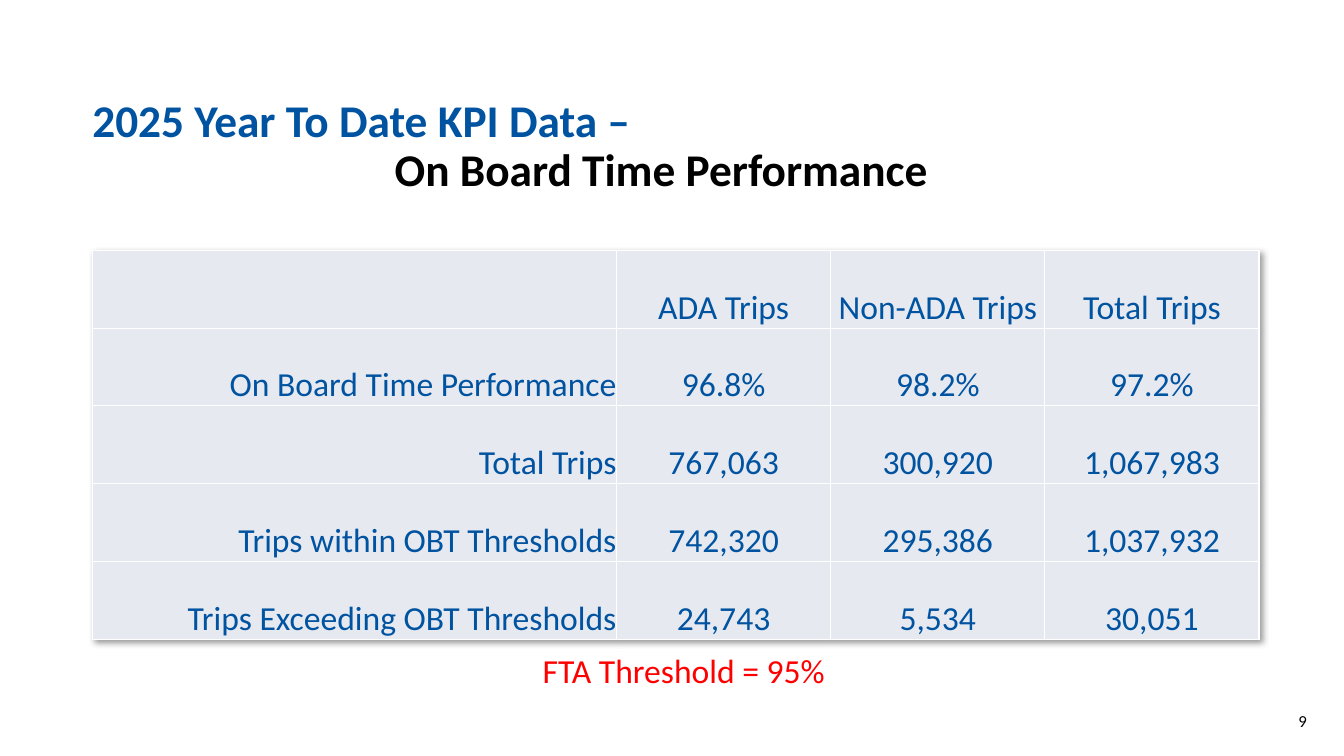
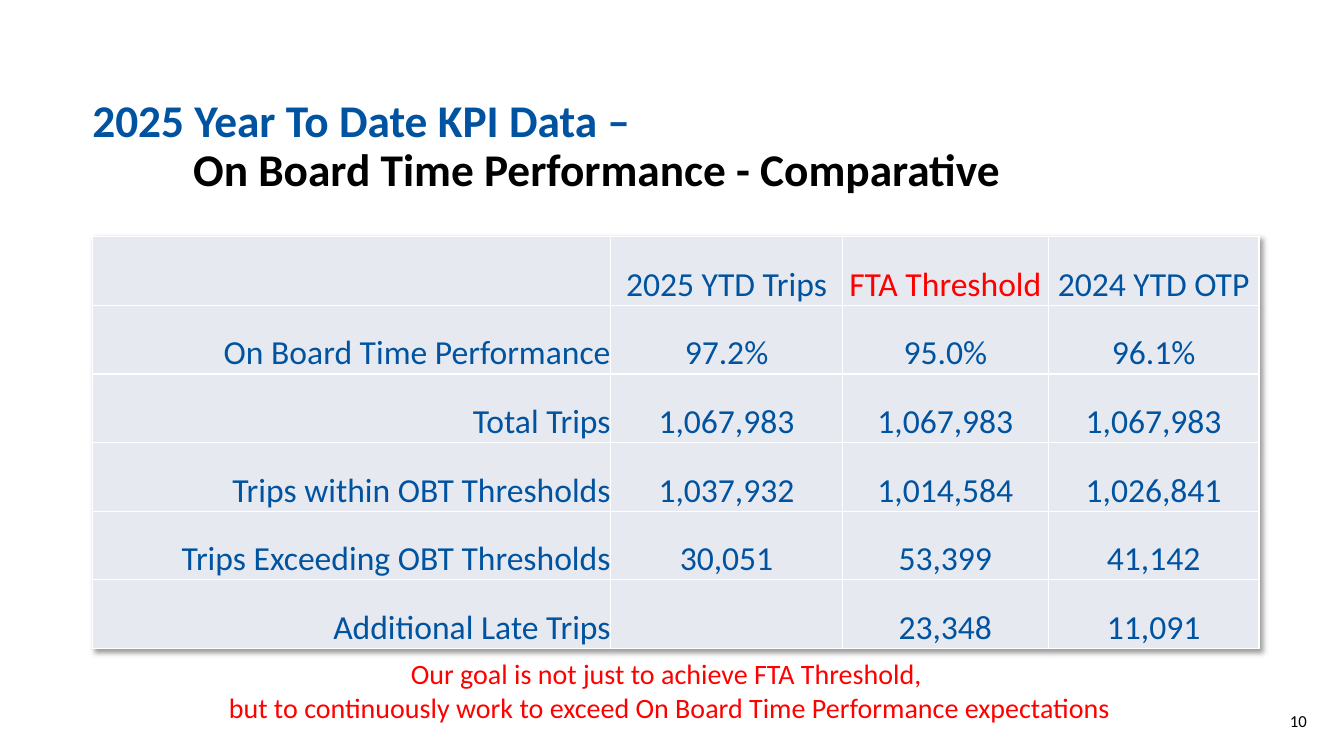
from dataclasses import dataclass

from lxml import etree
from pptx import Presentation
from pptx.dml.color import RGBColor
from pptx.enum.text import MSO_ANCHOR, PP_ALIGN
from pptx.oxml import parse_xml
from pptx.util import Inches, Pt

LEFT, CENTER, RIGHT = PP_ALIGN.LEFT, PP_ALIGN.CENTER, PP_ALIGN.RIGHT
TOP, MIDDLE, BOTTOM = MSO_ANCHOR.TOP, MSO_ANCHOR.MIDDLE, MSO_ANCHOR.BOTTOM
DRAWING = "http://schemas.openxmlformats.org/drawingml/2006/main"
COLUMNS, ROWS = 160, 90
UNIT = Inches(1) / 12


@dataclass(frozen=True)
class Theme:
    font: str = "Calibri"
    blue: str = "0053A0"
    black: str = "000000"
    red: str = "FF0000"
    cell: str = "E7E9F0"
    border: str = "FFFFFF"
    title_size: float = 32.4
    table_size: float = 24
    number_size: float = 12


@dataclass(frozen=True)
class Area:
    """A rectangle in grid columns and rows."""
    left: float
    top: float
    width: float
    height: float

    def lengths(self):
        return [grid(value) for value in (self.left, self.top, self.width, self.height)]


THEME = Theme()
TITLE_AREA = Area(11, 8, 139, 16)
NUMBER_AREA = Area(136.4, 83.4, 19.2, 4.8)


def grid(count):
    return round(count * UNIT)


def style(para, size, color, align=LEFT, bold=False):
    para.alignment = align
    for span in para.runs:
        span.font.name = THEME.font
        span.font.size = Pt(size)
        span.font.bold = bold
        span.font.color.rgb = RGBColor.from_string(color)


def add_text(page, area, lines, anchor=TOP, insets=(1.2, 0.6, 1.2, 0.6)):
    """Add a wrapping box with one paragraph per line; insets run left, top, right, bottom."""
    frame = page.shapes.add_textbox(*area.lengths()).text_frame
    frame.word_wrap = True
    frame.vertical_anchor = anchor
    (frame.margin_left, frame.margin_top,
     frame.margin_right, frame.margin_bottom) = map(grid, insets)
    frame.text = "\n".join(lines)
    return frame.paragraphs


def add_title(page, subject, indent):
    lines = ["2025 Year To Date KPI Data –", subject]
    paras = add_text(page, TITLE_AREA, lines, BOTTOM, (0, 4.8, 0, 0.6))
    for para, color in zip(paras, (THEME.blue, THEME.black)):
        style(para, THEME.title_size, color, bold=True)
        para.line_spacing = 0.9
    paras[1]._p.get_or_add_pPr().set("marL", str(grid(indent)))


def add_page_number(page, number):
    paras = add_text(page, NUMBER_AREA, [str(number)], MIDDLE, (1.2, 0.6, 0, 0.6))
    style(paras[0], THEME.number_size, THEME.black, RIGHT)


def add_note(page, area, lines, size):
    for para in add_text(page, area, lines):
        style(para, size, THEME.red, CENTER)


def add_borders(cell):
    properties = cell._tc.get_or_add_tcPr()
    for side in ("lnL", "lnR", "lnT", "lnB"):
        line = etree.SubElement(properties, f"{{{DRAWING}}}{side}", w=str(Pt(1)))
        fill = etree.SubElement(line, f"{{{DRAWING}}}solidFill")
        etree.SubElement(fill, f"{{{DRAWING}}}srgbClr", val=THEME.border)


def add_table_shadow(table):
    table._tbl.tblPr.insert(0, parse_xml(
        f'<a:effectLst xmlns:a="{DRAWING}">'
        '<a:outerShdw blurRad="50800" dist="38100" dir="2700000" algn="tl" rotWithShape="0">'
        '<a:prstClr val="black"><a:alpha val="40000"/></a:prstClr>'
        '</a:outerShdw></a:effectLst>'))


def fill_cell(cell, text, color, align):
    cell.margin_left = cell.margin_right = cell.margin_top = cell.margin_bottom = 0
    cell.vertical_anchor = BOTTOM
    add_borders(cell)
    cell.fill.solid()
    cell.fill.fore_color.rgb = RGBColor.from_string(THEME.cell)
    if text:
        cell.text = text
        style(cell.text_frame.paragraphs[0], THEME.table_size, color, align)


def add_data_table(page, area, widths, records, red_text=""):
    table = page.shapes.add_table(len(records), len(widths), *area.lengths()).table
    table.first_row = table.horz_banding = False
    add_table_shadow(table)
    for column, width in zip(table.columns, widths):
        column.width = grid(width)
    for row, record in zip(table.rows, records):
        row.height = grid(area.height / len(records))
        for index, (cell, text) in enumerate(zip(row.cells, record)):
            color = THEME.red if text == red_text else THEME.blue
            fill_cell(cell, text, color, CENTER if index else RIGHT)


def add_kpi_slide(deck, number, title, table, note):
    page = deck.slides.add_slide(deck.slide_layouts[6])
    add_title(page, **title)
    add_page_number(page, number)
    add_data_table(page, **table)
    add_note(page, **note)


KPI_SLIDES = [
    dict(
        number=9,
        title=dict(subject="On Board Time Performance", indent=36),
        table=dict(
            area=Area(11, 29.8, 138.9, 46.3),
            widths=(62.4, 25.5, 25.5, 25.5),
            records=[
                ("", "ADA Trips", "Non-ADA Trips", "Total Trips"),
                ("On Board Time Performance", "96.8%", "98.2%", "97.2%"),
                ("Total Trips", "767,063", "300,920", "1,067,983"),
                ("Trips within OBT Thresholds", "742,320", "295,386", "1,037,932"),
                ("Trips Exceeding OBT Thresholds", "24,743", "5,534", "30,051"),
            ],
        ),
        note=dict(area=Area(25.4, 76.8, 112, 6), lines=["FTA Threshold = 95%"], size=24),
    ),
    dict(
        number=10,
        title=dict(subject="On Board Time Performance - Comparative", indent=12),
        table=dict(
            area=Area(11, 28.2, 138.9, 49),
            widths=(61.7, 27.6, 24.5, 25.1),
            records=[
                ("", "2025 YTD Trips", "FTA Threshold", "2024 YTD OTP"),
                ("On Board Time Performance", "97.2%", "95.0%", "96.1%"),
                ("Total Trips", "1,067,983", "1,067,983", "1,067,983"),
                ("Trips within OBT Thresholds", "1,037,932", "1,014,584", "1,026,841"),
                ("Trips Exceeding OBT Thresholds", "30,051", "53,399", "41,142"),
                ("Additional Late Trips", "", "23,348", "11,091"),
            ],
            red_text="FTA Threshold",
        ),
        note=dict(
            area=Area(19.1, 77.6, 121.2, 9.2),
            lines=[
                "Our goal is not just to achieve FTA Threshold, ",
                "but to continuously work to exceed On Board Time Performance expectations",
            ],
            size=20,
        ),
    ),
]


def main():
    deck = Presentation()
    deck.slide_width, deck.slide_height = grid(COLUMNS), grid(ROWS)
    for content in KPI_SLIDES:
        add_kpi_slide(deck, **content)
    deck.save("out.pptx")


if __name__ == "__main__":
    main()
